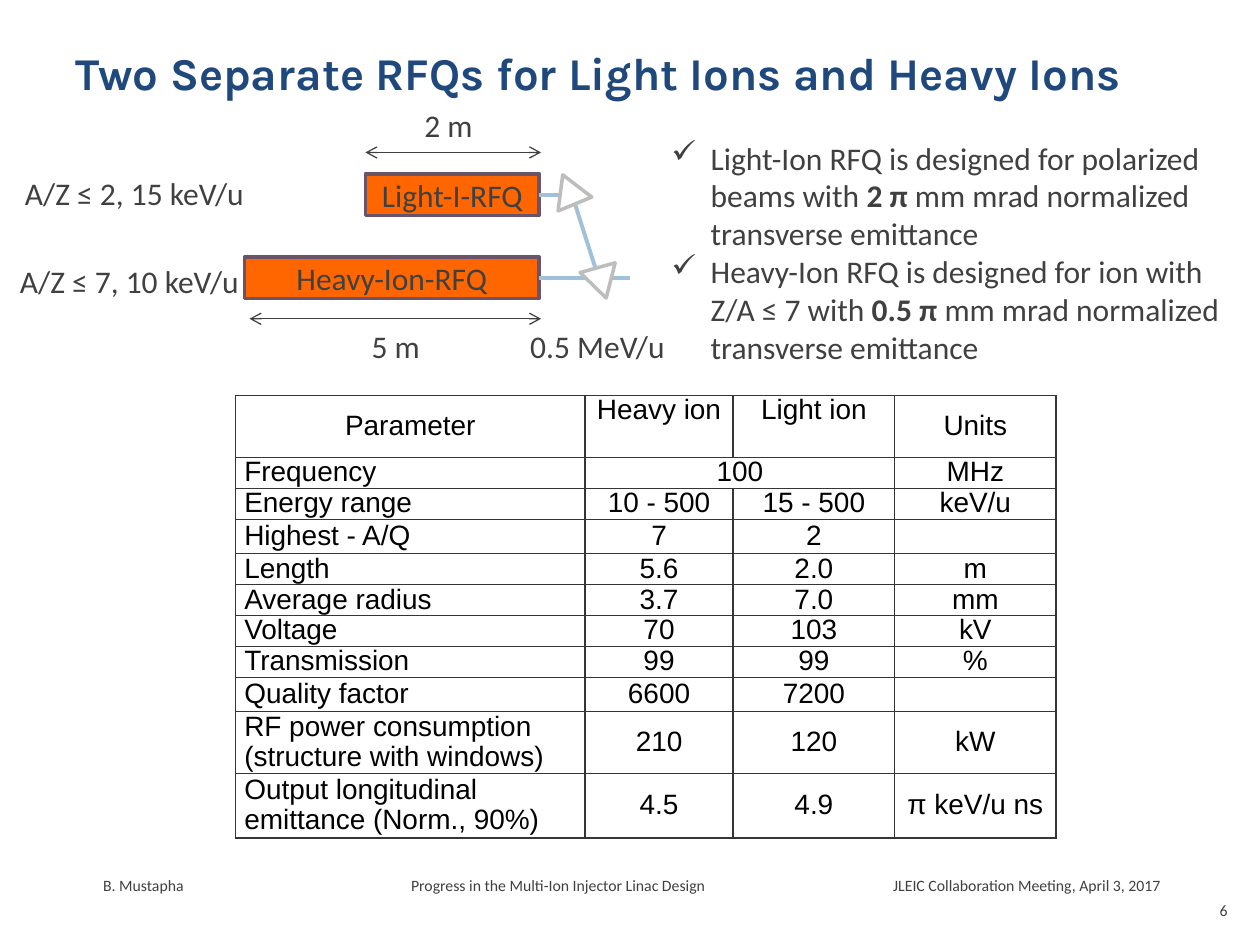
from dataclasses import dataclass

import pptx
import pptx.dml.color
import pptx.enum.shapes
import pptx.enum.text
import pptx.oxml
import pptx.oxml.ns
import pptx.util

Pt = pptx.util.Pt
RGBColor = pptx.dml.color.RGBColor
Align = pptx.enum.text.PP_ALIGN
Anchor = pptx.enum.text.MSO_ANCHOR
Kind = pptx.enum.shapes.MSO_SHAPE
Line = pptx.enum.shapes.MSO_CONNECTOR

NAVY = RGBColor(0x1F, 0x49, 0x7D)
GREY = RGBColor(0x40, 0x40, 0x40)
BLACK = RGBColor(0, 0, 0)
WHITE = RGBColor(255, 255, 255)
ORANGE = RGBColor(0xFF, 0x66, 0x00)
PLUM = RGBColor(0x69, 0x54, 0x6A)
BLUE = RGBColor(0xA1, 0xC0, 0xDA)
SILVER = RGBColor(0xBD, 0xBD, 0xBD)
EDGE = "353535"


@dataclass
class Font:
    size: float
    name: str = "Calibri"
    color: RGBColor = GREY
    bold: bool = False


@dataclass
class Box:
    left: float
    top: float
    width: float
    height: float

    def args(self) -> list:
        return [Pt(v) for v in (self.left, self.top, self.width, self.height)]


@dataclass
class Label:
    text: str
    box: Box
    font: Font
    align: Align = Align.LEFT
    anchor: Anchor = Anchor.TOP
    wrap: bool = False


BODY = Font(18)
SMALL = Font(9)
CELL = Font(16, "Arial", BLACK)
LABELS = [
    Label("Two Separate RFQs for Light Ions and Heavy Ions", Box(36, 18.72, 648, 44.64),
          Font(26, "Karla", NAVY, True), anchor=Anchor.MIDDLE, wrap=True),
    Label("6", Box(678.24, 511.2, 30.24, 28.8), SMALL, Align.RIGHT, wrap=True),
    Label("0.5 MeV/u", Box(295.92, 183.6, 92.16, 28.8), BODY),
    Label("A/Z ≤ 2, 15 keV/u", Box(7.2, 95.76, 141.12, 28.8), BODY),
    Label("A/Z ≤ 7, 10 keV/u", Box(4.32, 146.16, 141.12, 28.8), BODY),
    Label("5 m", Box(205.2, 183.6, 42.48, 28.8), BODY),
    Label("2 m", Box(235.44, 56.88, 42.48, 28.8), BODY),
]
FOOTER = ["B. Mustapha", "Progress in the Multi-Ion Injector Linac Design",
          "JLEIC Collaboration Meeting, April 3, 2017"]
STOPS = [176, 451.5]
POINTS = [
    [("Light-Ion RFQ is designed for polarized beams with ", False), ("2 π", True),
     (" mm mrad normalized transverse emittance", False)],
    [("Heavy-Ion RFQ is designed for ion with Z/A ≤ 7 with ", False), ("0.5 π ", True),
     ("mm mrad normalized transverse emittance", False)],
]
COLS = [199.6, 84.7, 92.3, 92.2]
ROWS = [35.3] + [17.7] * 8 + [35.4, 36.7]
DATA = [
    ("Parameter", "Heavy ion", "Light ion", "Units"),
    ("Frequency", "100", "", "MHz"),
    ("Energy range", "10 - 500", "15 - 500", "keV/u"),
    ("Highest - A/Q", "7", "2", ""),
    ("Length", "5.6", "2.0", "m"),
    ("Average radius", "3.7", "7.0", "mm"),
    ("Voltage", "70", "103", "kV"),
    ("Transmission", "99", "99", "%"),
    ("Quality factor", "6600", "7200", ""),
    ("RF power consumption (structure with windows)", "210", "120", "kW"),
    ("Output longitudinal\nemittance (Norm., 90%)", "4.5", "4.9", "π keV/u ns"),
]


def xml(tag: str, rest: str) -> object:
    return pptx.oxml.parse_xml(f"<a:{tag} {pptx.oxml.ns.nsdecls('a')} {rest}")


def add_run(para, text: str, font: Font, bold: bool = False) -> None:
    run = para.add_run()
    run.text = text
    run.font.size = Pt(font.size)
    run.font.name = font.name
    run.font.color.rgb = font.color
    run.font.bold = bold or font.bold


def add_label(slide, label: Label) -> None:
    frame = slide.shapes.add_textbox(*label.box.args()).text_frame
    frame.word_wrap = label.wrap
    frame.vertical_anchor = label.anchor
    frame.paragraphs[0].alignment = label.align
    add_run(frame.paragraphs[0], label.text, label.font)


def add_foot(slide) -> None:
    frame = slide.shapes.add_textbox(*Box(51.84, 496.8, 633.6, 18).args()).text_frame
    frame.word_wrap = True
    para = frame.paragraphs[0]
    tabs = "".join(f'<a:tab pos="{Pt(x)}" algn="l"/>' for x in STOPS)
    para._p.get_or_add_pPr().append(xml("tabLst", f">{tabs}</a:tabLst>"))
    add_run(para, "\t".join(FOOTER), SMALL)


def add_points(slide) -> None:
    frame = slide.shapes.add_textbox(*Box(376.56, 75.6, 336.24, 138.24).args()).text_frame
    frame.word_wrap = True
    for i, parts in enumerate(POINTS):
        para = frame.add_paragraph() if i else frame.paragraphs[0]
        props = para._p.get_or_add_pPr()
        props.set("marL", str(Pt(22.5)))
        props.set("indent", str(-Pt(22.5)))
        props.append(xml("buChar", 'char="✓"/>'))
        for text, bold in parts:
            add_run(para, text, BODY, bold)


def add_shape(slide, kind: Kind, box: Box, fill: RGBColor, edge: RGBColor,
              text: str = "", turn: float = 0):
    shape = slide.shapes.add_shape(kind, *box.args())
    shape.shadow.inherit = False
    shape.rotation = turn
    shape.fill.solid()
    shape.fill.fore_color.rgb = fill
    shape.line.color.rgb = edge
    shape.line.width = Pt(2)
    if text:
        shape.text_frame.vertical_anchor = Anchor.MIDDLE
        shape.text_frame.paragraphs[0].alignment = Align.CENTER
        add_run(shape.text_frame.paragraphs[0], text, BODY)
    return shape


def add_line(slide, x1: float, y1: float, x2: float, y2: float,
             color: RGBColor = BLUE, width: float = 2.25, arrows: bool = False):
    line = slide.shapes.add_connector(Line.STRAIGHT, Pt(x1), Pt(y1), Pt(x2), Pt(y2))
    line.line.color.rgb = color
    line.line.width = Pt(width)
    if arrows:
        for end in ("headEnd", "tailEnd"):
            line.line._get_or_add_ln().append(xml(end, 'type="arrow"/>'))
    line._element.spPr.append(xml("effectLst", "/>"))
    return line


def fill_cell(cell, text: str, align: Align, anchor: Anchor) -> None:
    cell.margin_left = cell.margin_right = Pt(5)
    cell.margin_top = cell.margin_bottom = 0
    cell.vertical_anchor = anchor
    for side in ("lnL", "lnR", "lnT", "lnB"):
        cell._tc.get_or_add_tcPr().append(xml(
            side, f'w="{Pt(1)}"><a:solidFill><a:srgbClr val="{EDGE}"/></a:solidFill></a:{side}>'))
    cell.fill.background()
    for i, part in enumerate(text.split("\n")):
        para = cell.text_frame.add_paragraph() if i else cell.text_frame.paragraphs[0]
        para.alignment = align
        para.line_spacing = 0.96
        if part:
            add_run(para, part, CELL)
        else:
            para._p.append(xml("endParaRPr", f'sz="{CELL.size * 100}"/>'))


def add_grid(slide) -> None:
    box = Box(134.64, 226.08, sum(COLS), sum(ROWS))
    table = slide.shapes.add_table(len(ROWS), len(COLS), *box.args()).table
    table.first_row = table.horz_banding = False
    for col, width in zip(table.columns, COLS):
        col.width = Pt(width)
    for r, (row, texts) in enumerate(zip(table.rows, DATA)):
        row.height = Pt(ROWS[r])
        for c, text in enumerate(texts):
            align = Align.LEFT if r and c == 0 else Align.CENTER
            anchor = Anchor.TOP if r == 0 and c in (1, 2) else Anchor.MIDDLE
            fill_cell(table.cell(r, c), text, align, anchor)
    table.cell(1, 1).merge(table.cell(1, 2))


def add_beam(slide) -> None:
    """Draw both RFQs, their length arrows and the beam lines."""
    light = add_shape(slide, Kind.RECTANGLE, Box(208.8, 99.36, 99.36, 23.76),
                      ORANGE, PLUM, "Light-I-RFQ")
    heavy = add_shape(slide, Kind.RECTANGLE, Box(139.68, 146.88, 168.48, 23.76),
                      ORANGE, PLUM, "Heavy-Ion-RFQ")
    add_line(slide, 308.16, 111.24, 328.32, 111.24).begin_connect(light, 3)
    add_line(slide, 360, 158.76, 344.16, 158.76)
    add_line(slide, 326.88, 111.24, 342, 158.76)
    add_line(slide, 308.16, 158.76, 352.08, 158.76).begin_connect(heavy, 3)
    for left, top, turn in ((313.92, 104.4, 217.5), (334.8, 147.6, 44.4)):
        add_shape(slide, Kind.ISOSCELES_TRIANGLE, Box(left, top, 20.88, 18),
                  WHITE, SILVER, turn=turn)
    for left, y in ((142.56, 182.16), (208.8, 87.12)):
        add_line(slide, left, y, 309.2, y, GREY, 0.75, True)


def main() -> None:
    deck = pptx.Presentation()
    deck.slide_width, deck.slide_height = Pt(720), Pt(540)
    slide = deck.slides.add_slide(deck.slide_layouts[6])
    add_grid(slide)
    add_points(slide)
    add_beam(slide)
    for label in LABELS:
        add_label(slide, label)
    add_foot(slide)
    deck.save("out.pptx")


if __name__ == "__main__":
    main()
